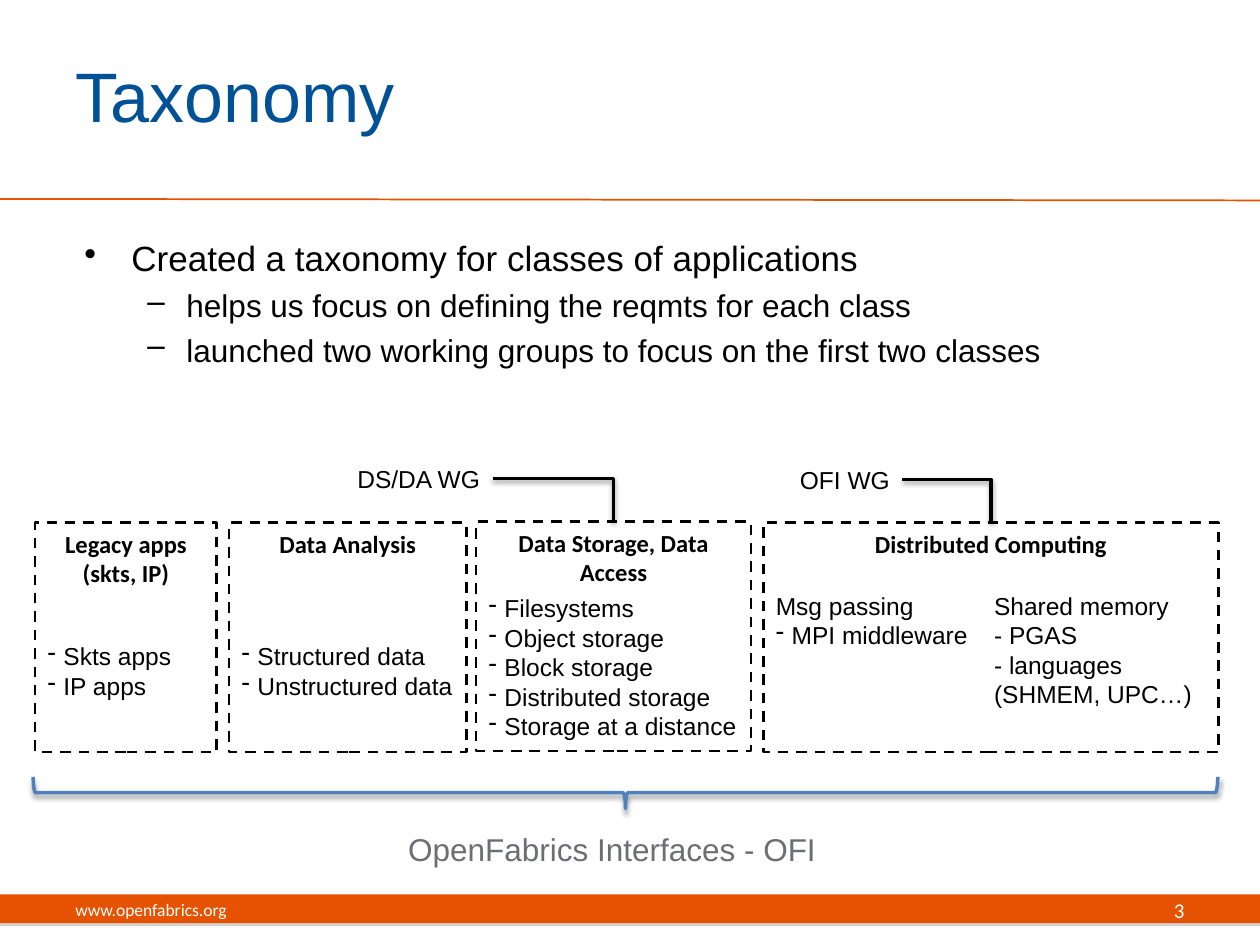
from dataclasses import dataclass
from typing import Optional

from lxml import etree
from pptx import Presentation
from pptx.dml.color import RGBColor
from pptx.enum.dml import MSO_LINE
from pptx.enum.shapes import MSO_CONNECTOR, MSO_SHAPE
from pptx.enum.text import MSO_ANCHOR, PP_ALIGN
from pptx.oxml.ns import qn
from pptx.util import Cm, Pt

DASH = MSO_LINE.DASH
RECTANGLE, LEFT_BRACE = MSO_SHAPE.RECTANGLE, MSO_SHAPE.LEFT_BRACE
STRAIGHT, ELBOW = MSO_CONNECTOR.STRAIGHT, MSO_CONNECTOR.ELBOW
TOP, MIDDLE = MSO_ANCHOR.TOP, MSO_ANCHOR.MIDDLE
LEFT, CENTER, RIGHT = PP_ALIGN.LEFT, PP_ALIGN.CENTER, PP_ALIGN.RIGHT
TOP_SIDE, RIGHT_SIDE = 0, 3

BLACK, WHITE, ORANGE = "000000", "FFFFFF", "E55302"
TITLE_BLUE, BRACE_BLUE, GRAY = "005195", "4F81BD", "6D6E71"


@dataclass
class Style:
    size: float
    font: str = "Arial"
    color: str = BLACK
    bold: bool = False
    align: PP_ALIGN = LEFT


@dataclass
class Item:
    text: str
    bullet: str = ""
    margin: float = 0
    hanging: float = 0
    size: Optional[float] = None
    space_before: float = 0


@dataclass
class Area:
    left: float
    top: float
    width: float
    height: float

    def lengths(self) -> tuple:
        return Cm(self.left), Cm(self.top), Cm(self.width), Cm(self.height)


@dataclass
class AppClass:
    heading: str
    area: Area
    group: str = ""
    group_area: Optional[Area] = None


@dataclass
class Listing:
    area: Area
    items: list


def dash(text: str) -> Item:
    return Item(text, "-", 0.32, 0.32)


CLASSES = [
    AppClass("Legacy apps (skts, IP)", Area(0.71, 10.54, 3.66, 4.62)),
    AppClass("Data Analysis", Area(4.62, 10.54, 4.78, 4.62)),
    AppClass("Data Storage, Data Access", Area(9.6, 10.52, 5.54, 4.62),
             "DS/DA WG", Area(6.81, 9.22, 3.12, 0.86)),
    AppClass("Distributed Computing", Area(15.39, 10.54, 9.17, 4.62),
             "OFI WG", Area(15.7, 9.24, 2.49, 0.86)),
]
LISTINGS = [
    Listing(Area(0.71, 12.8, 3.66, 1.45), [dash("Skts apps"), dash("IP apps")]),
    Listing(Area(4.62, 12.8, 4.78, 2.06),
            [dash("Structured data"), dash("Unstructured data")]),
    Listing(Area(9.6, 11.84, 5.54, 3.25),
            [dash("Filesystems"), dash("Object storage"), dash("Block storage"),
             dash("Distributed storage"), dash("Storage at a distance")]),
    Listing(Area(15.39, 11.79, 4.55, 1.45),
            [Item("Msg passing"), dash("MPI middleware")]),
    Listing(Area(19.79, 11.79, 5.03, 2.64),
            [Item("Shared memory"), Item("- PGAS"),
             Item("- languages (SHMEM, UPC…)")]),
]
INTRO = [
    Item("Created a taxonomy for classes of applications", "•", 0.95, 0.95, 20),
    Item("helps us focus on defining the reqmts for each class",
         "–", 2.06, 0.79, 18, 4),
    Item("launched two working groups to focus on the first two classes",
         "–", 2.06, 0.79, 18, 4),
]


def rgb(color: str) -> RGBColor:
    return RGBColor.from_string(color)


def set_shadow(shape, color: str = BLACK, alpha: int = 38,
               blur: float = 3.1, distance: float = 1.6) -> None:
    """Give the shape a shadow that falls straight down."""
    effects = etree.SubElement(shape._element.spPr, qn("a:effectLst"))
    outer = etree.SubElement(effects, qn("a:outerShdw"), blurRad=str(Pt(blur)),
                             dist=str(Pt(distance)), dir="5400000", rotWithShape="0")
    tint = etree.SubElement(outer, qn("a:srgbClr"), val=color)
    etree.SubElement(tint, qn("a:alpha"), val=str(alpha * 1000))


def set_line(shape, color: str, width: float) -> None:
    shape.line.color.rgb = rgb(color)
    shape.line.width = Pt(width)


def fill_text(frame, items: list, style: Style, anchor=TOP, wrap: bool = True) -> None:
    frame.word_wrap = wrap
    frame.vertical_anchor = anchor
    frame.text = "\n".join(item.text for item in items)
    for para, item in zip(frame.paragraphs, items):
        if item.bullet:
            properties = para._p.get_or_add_pPr()
            properties.set("marL", str(Cm(item.margin)))
            properties.set("indent", str(-Cm(item.hanging)))
            etree.SubElement(properties, qn("a:buChar"), char=item.bullet)
        para.alignment = style.align
        if item.space_before:
            para.space_before = Pt(item.space_before)
        for span in para.runs:
            span.font.name = style.font
            span.font.size = Pt(item.size or style.size)
            span.font.bold = style.bold
            span.font.color.rgb = rgb(style.color)


def add_text(page, area: Area, items: list, style: Style, anchor=TOP,
             wrap: bool = True):
    box = page.shapes.add_textbox(*area.lengths())
    fill_text(box.text_frame, items, style, anchor, wrap)
    return box


def add_class(page, app_class: AppClass) -> None:
    """Draw a dashed class box and, where it has one, its working group."""
    box = page.shapes.add_shape(RECTANGLE, *app_class.area.lengths())
    box.fill.background()
    set_line(box, BLACK, 1.5)
    box.line.dash_style = DASH
    box.shadow.inherit = False
    fill_text(box.text_frame, [Item(app_class.heading)],
              Style(14, "Calibri", bold=True, align=CENTER))
    if app_class.group_area:
        label = add_text(page, app_class.group_area, [Item(app_class.group)],
                         Style(14, align=RIGHT))
        link = page.shapes.add_connector(ELBOW, 0, 0, 0, 0)
        link.begin_connect(label, RIGHT_SIDE)
        link.end_connect(box, TOP_SIDE)
        link._element.spPr.find(qn("a:prstGeom")).set("prst", "bentConnector2")
        set_line(link, BLACK, 2)
        set_shadow(link)


def add_frame(page) -> None:
    """Draw the title rule and the footer bar with its texts."""
    bar = page.shapes.add_shape(RECTANGLE, *Area(0, 18.03, 25.4, 0.58).lengths())
    bar.fill.solid()
    bar.fill.fore_color.rgb = rgb(ORANGE)
    bar.line.fill.background()
    set_shadow(bar, "808080", 35, 0, 1.8)
    rule = page.shapes.add_connector(STRAIGHT, 0, Cm(4.01), Cm(25.4), Cm(4.04))
    set_line(rule, ORANGE, 1)
    etree.SubElement(rule._element.spPr, qn("a:effectLst"))
    add_text(page, Area(1.27, 17.83, 8.05, 1.02), [Item("www.openfabrics.org")],
             Style(10, "Calibri", WHITE), MIDDLE)
    add_text(page, Area(18.21, 17.83, 5.92, 1.02), [Item("3")],
             Style(12, "Calibri", WHITE, align=RIGHT), MIDDLE)


def main() -> None:
    deck = Presentation()
    deck.slide_width, deck.slide_height = Cm(25.4), Cm(19.05)
    page = deck.slides.add_slide(deck.slide_layouts[5])
    add_frame(page)

    title = page.shapes.title
    title.left, title.top, title.width, title.height = Area(
        1.27, 0.64, 20.75, 2.54).lengths()
    fill_text(title.text_frame, [Item("Taxonomy")], Style(40, color=TITLE_BLUE), MIDDLE)
    add_text(page, Area(1.45, 4.65, 22.86, 2.97), INTRO, Style(18))

    for app_class in CLASSES:
        add_class(page, app_class)
    for listing in LISTINGS:
        add_text(page, listing.area, listing.items, Style(14))

    brace = page.shapes.add_shape(LEFT_BRACE, *Area(12.29, 4.04, 0.64, 23.88).lengths())
    brace.rotation = 270
    brace.fill.background()
    set_line(brace, BRACE_BLUE, 2)
    set_shadow(brace)
    add_text(page, Area(7.98, 16.61, 8.81, 1.02), [Item("OpenFabrics Interfaces - OFI")],
             Style(18, color=GRAY), wrap=False)
    deck.save("out.pptx")


if __name__ == "__main__":
    main()
